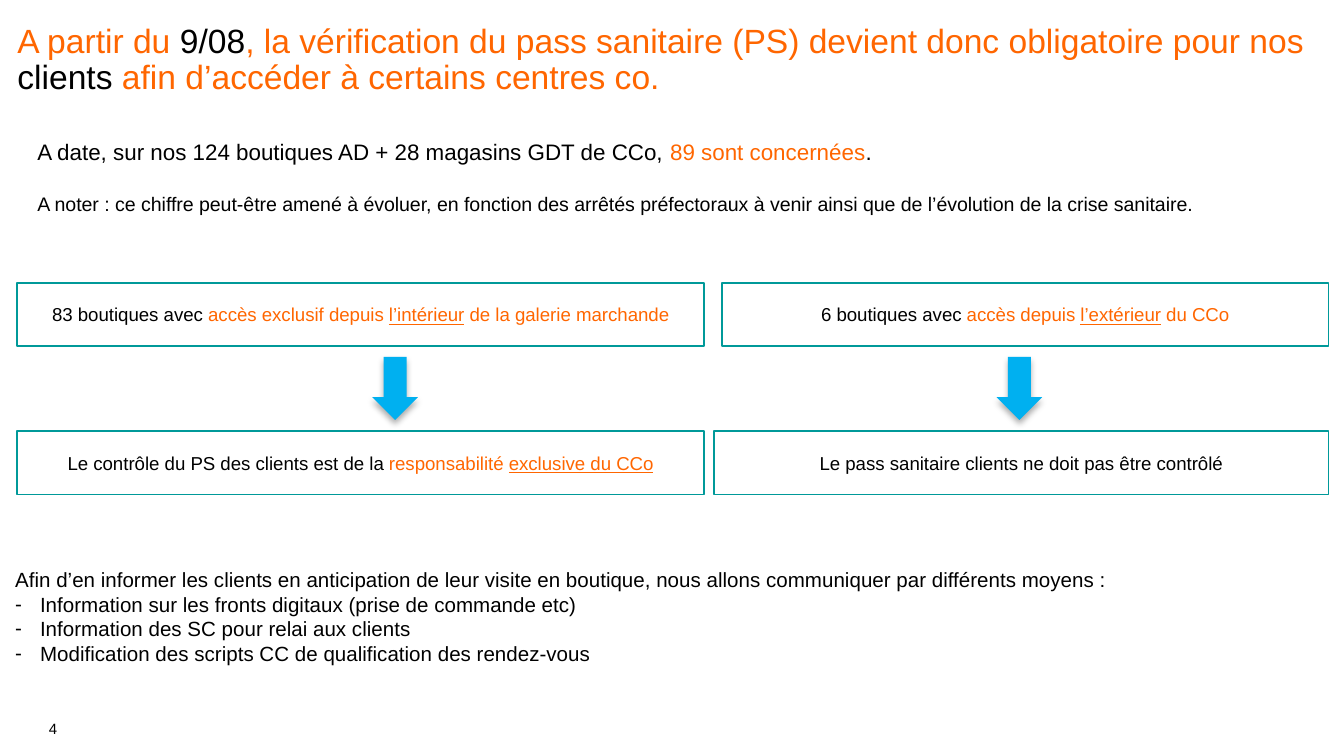
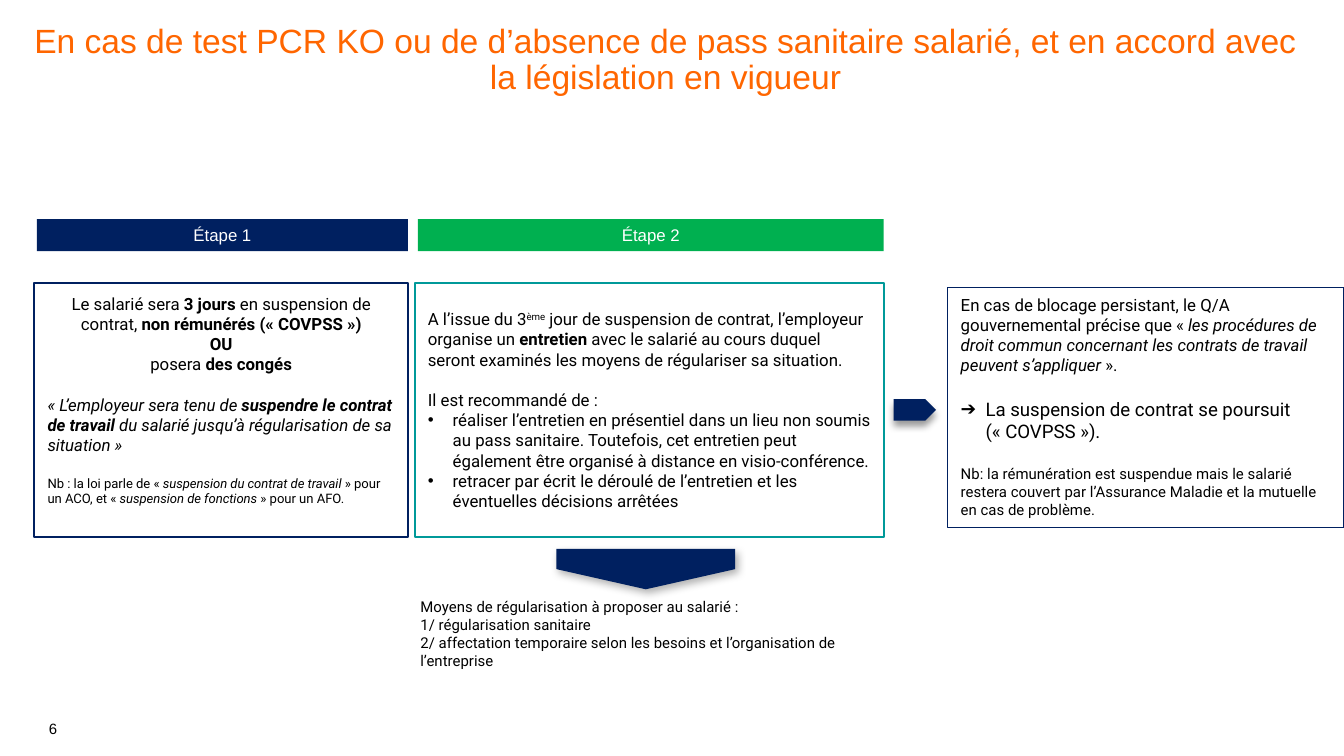
from lxml.etree import SubElement
from pptx import Presentation
from pptx.dml.color import RGBColor
from pptx.enum.shapes import MSO_SHAPE as Shape
from pptx.enum.text import MSO_ANCHOR as Anchor, PP_ALIGN as Align
from pptx.oxml.ns import qn
from pptx.util import Emu, Pt

EMU_PER_PX = 4572  # 200 px to the inch
ORANGE, BLACK, WHITE = "FF6600", "000000", "FFFFFF"
TEAL, NAVY, GREEN, SKY = "009999", "002060", "00B050", "00B0F0"
SANS, ROBOTO = "Arial", "Roboto"
HARD_SPACE = chr(160)

ACCENT = {"color": ORANGE}
ACCENT_LINE = {"color": ORANGE, "underline": True}
BOLD = {"bold": True}
ITALIC = {"italic": True}
BOLD_ITALIC = {"bold": True, "italic": True}


def px(length):
    return Emu(length * EMU_PER_PX)


def rgb(value):
    return RGBColor.from_string(value)


def bind_quotes(text):
    """Keep French quotation marks on the line of the words they enclose."""
    return text.replace("« ", "«" + HARD_SPACE).replace(" »", HARD_SPACE + "»")


def add_span(para, text, size=9, font=SANS, color=BLACK, bold=False,
             italic=False, underline=False, raised=False):
    span = para.add_run()
    span.text = bind_quotes(text)
    span.font.size = Pt(size)
    span.font.name = font
    span.font.color.rgb = rgb(color)
    span.font.bold = bold
    span.font.italic = italic
    span.font.underline = underline
    if raised:
        span._r.get_or_add_rPr().set("baseline", "30000")


def set_bullet(para, mark, indent=37):
    props = para._p.get_or_add_pPr()
    props.set("marL", str(px(indent)))
    props.set("indent", str(px(-indent)))
    SubElement(props, qn("a:buFont"), typeface=SANS)
    SubElement(props, qn("a:buChar"), char=mark)


def add_para(box, *spans, align=Align.LEFT, before=0, line=None, bullet=None, **style):
    """Add a paragraph of spans, each a string or a (string, format) pair."""
    frame = box.text_frame
    first = frame.paragraphs[0]
    para = frame.add_paragraph() if first.runs else first
    para.alignment = align
    if before:
        para.space_before = Pt(before)
    if line:
        para.line_spacing = line
    if bullet:
        set_bullet(para, bullet)
    for span in spans:
        text, extra = (span, {}) if isinstance(span, str) else span
        add_span(para, text, **{**style, **extra})


def set_frame(box, anchor, insets):
    frame = box.text_frame
    frame.word_wrap = True
    frame.vertical_anchor = anchor
    (frame.margin_left, frame.margin_top,
     frame.margin_right, frame.margin_bottom) = map(px, insets)


def add_text_box(page, place, anchor=Anchor.TOP, insets=(20, 10, 20, 10)):
    box = page.shapes.add_textbox(*map(px, place))
    set_frame(box, anchor, insets)
    return box


def add_box(page, place, kind=Shape.RECTANGLE, fill=None, line=None, weight=1,
            anchor=Anchor.MIDDLE, insets=(20, 10, 20, 10)):
    box = page.shapes.add_shape(kind, *map(px, place))
    box.shadow.inherit = False
    if fill:
        box.fill.solid()
        box.fill.fore_color.rgb = rgb(fill)
    else:
        box.fill.background()
    if line:
        box.line.color.rgb = rgb(line)
        box.line.width = Pt(weight)
    else:
        box.line.fill.background()
    set_frame(box, anchor, insets)
    return box


def add_arrow(page, place, kind, fill, opacity, blur, distance, angle, rotation=0):
    """Add a block arrow with a soft black shadow."""
    arrow = add_box(page, place, kind, fill)
    arrow.rotation = rotation
    effects = arrow.element.spPr.find(qn("a:effectLst"))
    shadow = SubElement(effects, qn("a:outerShdw"), blurRad=str(Pt(blur)),
                        dist=str(Pt(distance)), dir=str(angle * 60000),
                        algn="ctr", rotWithShape="0")
    tint = SubElement(shadow, qn("a:srgbClr"), val=BLACK)
    SubElement(tint, qn("a:alpha"), val=str(opacity * 1000))


def add_page(deck, number, *title, align=Align.LEFT):
    """Add a blank page with its title and page number."""
    page = deck.slides.add_slide(deck.slide_layouts[6])
    flush = (0, 0, 0, 0)
    footer = add_text_box(page, (73, 1024, 60, 74), Anchor.BOTTOM, flush)
    add_para(footer, number, size=8, line=0.85)
    heading = add_text_box(page, (26, 36, 1929, 136), insets=flush)
    add_para(heading, *title, size=18, color=ORANGE, align=align, line=0.9)
    return page


def add_case(page, place, *spans):
    box = add_box(page, place, line=TEAL)
    add_para(box, *spans, size=10, align=Align.CENTER)


def add_step_header(page, left, width, text, fill):
    box = add_box(page, (left, 326, width, 48), fill=fill)
    add_para(box, text, color=WHITE, align=Align.CENTER)


def build_customer_page(deck):
    dark = {"color": BLACK}
    page = add_page(
        deck, "4", "A partir du ", ("9/08", dark),
        ", la vérification du pass sanitaire (PS) devient donc obligatoire pour nos ",
        ("clients", dark), " afin d’accéder à certains centres co.")

    intro = add_text_box(page, (36, 196, 1966, 172))
    add_para(intro, "A date, sur nos 124 boutiques AD + 28 magasins GDT de CCo, ",
             ("89 sont concernées", ACCENT), ".", size=12)
    add_para(intro, "A noter : ce chiffre peut-être amené à évoluer, en fonction des arrêtés "
             "préfectoraux à venir ainsi que de l’évolution de la crise sanitaire.",
             size=10.5, before=14.2)

    case_top, rule_top, height = 421, 642, 94
    add_case(page, (25, case_top, 1023, height), "83 boutiques avec ",
             ("accès exclusif depuis ", ACCENT), ("l’intérieur", ACCENT_LINE),
             (" de la galerie marchande", ACCENT))
    add_case(page, (25, rule_top, 1023, height), "Le contrôle du PS des clients est de la ",
             ("responsabilité ", ACCENT), ("exclusive du CCo", ACCENT_LINE))
    add_case(page, (1074, case_top, 903, height), "6 boutiques avec ",
             ("accès depuis ", ACCENT), ("l’extérieur", ACCENT_LINE), (" du CCo", ACCENT))
    add_case(page, (1062, rule_top, 915, height),
             "Le pass sanitaire clients ne doit pas être contrôlé")
    for left in (554, 1483):
        add_arrow(page, (left, 531, 68, height), Shape.DOWN_ARROW, SKY,
                  opacity=32, blur=3.5, distance=2.2, angle=90)

    means = add_box(page, (3, 834, 1974, 168), fill=WHITE, anchor=Anchor.TOP)
    add_para(means, "Afin d’en informer les clients en anticipation de leur visite en boutique, "
             "nous allons communiquer par différents moyens :", size=11)
    for text in ("Information sur les fronts digitaux (prise de commande etc)",
                 "Information des SC pour relai aux clients",
                 "Modification des scripts CC de qualification des rendez-vous"):
        add_para(means, text, size=11, bullet="-")


def add_suspension(page):
    box = add_box(page, (51, 421, 556, 378), line=NAVY, insets=(20, 10, 20, 40))
    centred = {"font": ROBOTO, "align": Align.CENTER}
    add_para(box, "Le salarié sera ", ("3 jours ", BOLD), "en suspension de contrat, ",
             ("non rémunérés (« COVPSS »)", BOLD), **centred)
    add_para(box, "OU", bold=True, **centred)
    add_para(box, "posera ", ("des congés", BOLD), **centred)
    add_para(box, "« L’employeur sera tenu de ",
             ("suspendre le contrat de travail ", BOLD_ITALIC),
             "du salarié jusqu’à régularisation de sa situation »",
             font=ROBOTO, italic=True, before=10.8)
    add_para(box, "Nb : la loi parle de « ", ("suspension du contrat de travail", ITALIC),
             " » pour un ACO, et « ", ("suspension de fonctions", ITALIC),
             " » pour un AFO.", font=ROBOTO, size=7, before=10.8)


def add_interview(page):
    box = add_box(page, (617, 421, 699, 378), line=TEAL)
    add_para(box, "A l’issue du 3", ("ème", {"raised": True}),
             " jour de suspension de contrat, l’employeur organise un ", ("entretien", BOLD),
             " avec le salarié au cours duquel seront examinés les moyens de régulariser "
             "sa situation.", font=ROBOTO)
    add_para(box, "Il est recommandé de :", font=ROBOTO, before=10.8)
    for text in ("réaliser l’entretien en présentiel dans un lieu non soumis au pass sanitaire. "
                 "Toutefois, cet entretien peut également être organisé à distance en "
                 "visio-conférence.",
                 "retracer par écrit le déroulé de l’entretien et les éventuelles décisions "
                 "arrêtées"):
        add_para(box, text, font=ROBOTO, bullet="•")


def add_deadlock(page):
    box = add_box(page, (1410, 428, 590, 357), line=NAVY, weight=0.75, anchor=Anchor.TOP)
    add_para(box, "En cas de blocage persistant, le Q/A gouvernemental précise que « ",
             ("les procédures de droit commun concernant les contrats de travail "
              "peuvent s’appliquer", ITALIC), " ».", font=ROBOTO)
    add_para(box, "La suspension de contrat se poursuit (« COVPSS »).",
             font=ROBOTO, size=10, before=12, bullet="➔")
    add_para(box, "Nb: la rémunération est suspendue mais le salarié restera couvert par "
             "l’Assurance Maladie et la mutuelle en cas de problème.",
             font=ROBOTO, size=8, before=12)


def build_employee_page(deck):
    page = add_page(deck, "6", "En cas de test PCR KO ou de d’absence de pass sanitaire "
                    "salarié, et en accord avec la législation en vigueur", align=Align.CENTER)
    add_step_header(page, 55, 552, "Étape 1", NAVY)
    add_suspension(page)
    add_step_header(page, 622, 693, "Étape 2", GREEN)
    add_interview(page)

    remedies = add_text_box(page, (606, 880, 740, 128))
    for text in ("Moyens de régularisation à proposer au salarié :",
                 "1/ régularisation sanitaire",
                 "2/ affectation temporaire selon les besoins et l’organisation de l’entreprise"):
        add_para(remedies, text, font=ROBOTO, size=8)

    add_deadlock(page)
    add_arrow(page, (931, 714, 60, 266), Shape.PENTAGON, NAVY,
              opacity=30, blur=4.5, distance=2.6, angle=53, rotation=90)
    add_arrow(page, (1330, 594, 63, 32), Shape.PENTAGON, NAVY,
              opacity=40, blur=4, distance=3, angle=90)


def main():
    deck = Presentation()
    deck.slide_width, deck.slide_height = px(2000), px(1125)
    build_customer_page(deck)
    build_employee_page(deck)
    deck.save("out.pptx")


if __name__ == "__main__":
    main()
